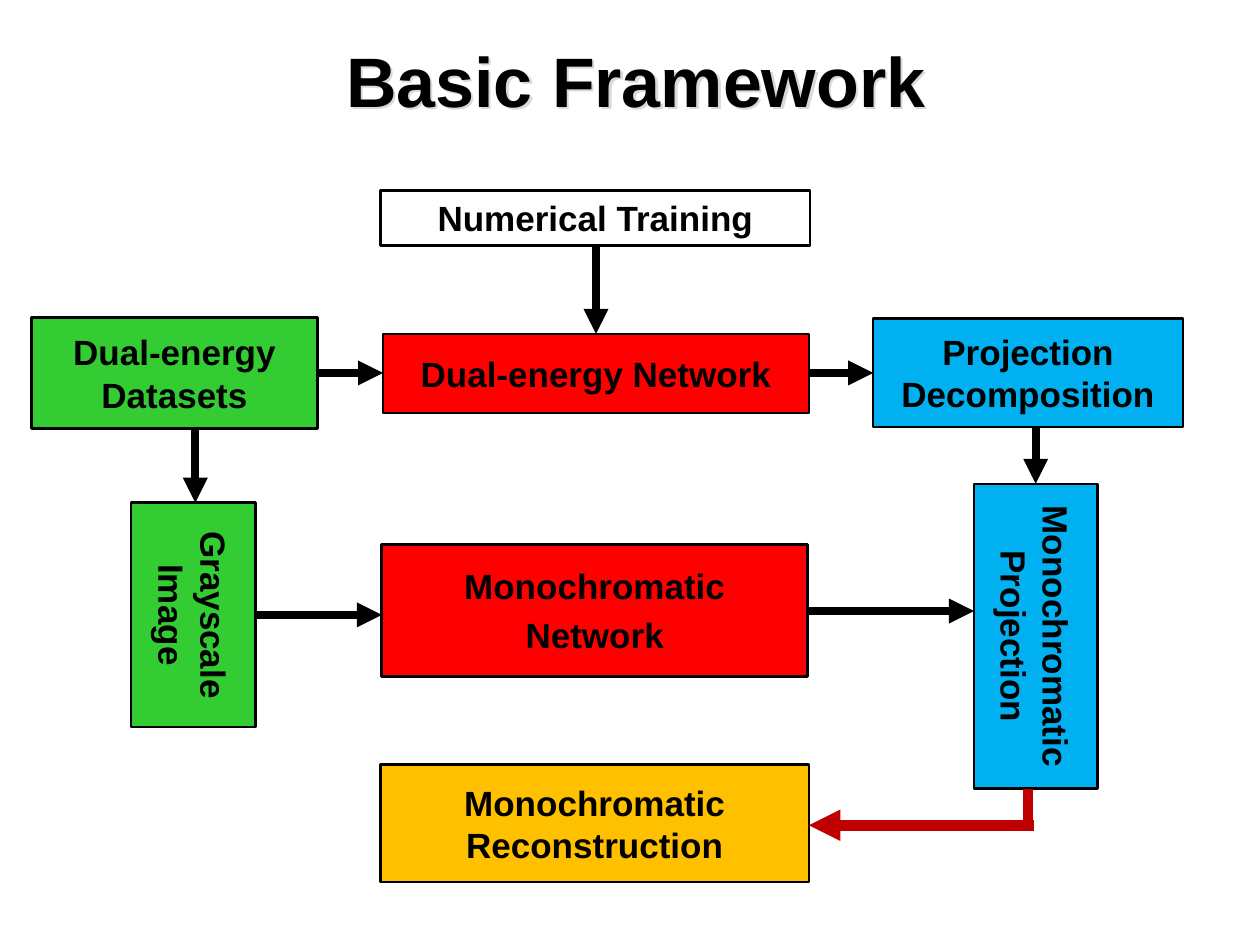
from collections import namedtuple

from lxml import etree
from pptx import Presentation
from pptx.dml.color import RGBColor
from pptx.enum.shapes import MSO_CONNECTOR, MSO_SHAPE
from pptx.enum.text import MSO_ANCHOR, PP_ALIGN
from pptx.oxml.ns import qn
from pptx.util import Inches, Pt

RECTANGLE = MSO_SHAPE.RECTANGLE
STRAIGHT = MSO_CONNECTOR.STRAIGHT
MIDDLE = MSO_ANCHOR.MIDDLE
CENTER = PP_ALIGN.CENTER

COLORS = {
    "ink": "000000",
    "data": "33CC33",
    "network": "FF0000",
    "projection": "00B0F0",
    "result": "FFC000",
    "return": "C00000",
    "shadow": "D9D9D9",
}

# The grid has square cells of a tenth of an inch
COLUMNS, ROWS = 100, 75

Stage = namedtuple("Stage", "left top right bottom")


def rgb(name):
    return RGBColor.from_string(COLORS[name])


def write(frame, text, size=20, color="ink", font="Arial", before=0, direction="horz"):
    """Fill a text frame with centred bold text, one paragraph a line."""
    frame.word_wrap = True
    frame.vertical_anchor = MIDDLE
    for index, line in enumerate(text.split("\n")):
        paragraph = frame.add_paragraph() if index else frame.paragraphs[0]
        paragraph.alignment = CENTER
        paragraph.space_before = Pt(before)
        run = paragraph.add_run()
        run.text = line
        run.font.size = Pt(size)
        run.font.bold = True
        run.font.name = font
        run.font.color.rgb = rgb(color)
    # python-pptx has no public setting for the text direction
    frame._element.find(qn("a:bodyPr")).set("vert", direction)


def add_effects(element):
    """Add an empty effect list, which also switches the theme's shadow off."""
    return etree.SubElement(element.find(qn("p:spPr")), qn("a:effectLst"))


class FlowSlide:
    """Current slide, its grid and the style of its parts."""

    outline = 1.5
    stroke = 4.75
    return_stroke = 6
    title_size = 40
    space_before = 4

    def __init__(self, deck):
        self.column = deck.slide_width / COLUMNS
        self.row = deck.slide_height / ROWS
        self.shapes = deck.slides.add_slide(deck.slide_layouts[6]).shapes

    def place(self, x, y):
        return round(x * self.column), round(y * self.row)

    def title(self, text, x, y, width, height):
        title = self.shapes.add_textbox(*self.place(x, y), *self.place(width, height))
        write(title.text_frame, text, size=self.title_size)
        # With no fill, the shadow falls from the letters
        shadow = etree.SubElement(add_effects(title.element), qn("a:outerShdw"),
                                  dist=str(Pt(2)), dir="2700000")
        etree.SubElement(shadow, qn("a:srgbClr"), val=COLORS["shadow"])

    def stage(self, text, x, y, width, height, fill=None, **text_format):
        """Draw a box and return its edges for the arrows."""
        box = self.shapes.add_shape(RECTANGLE, *self.place(x, y),
                                    *self.place(width, height))
        box.shadow.inherit = False
        if fill:
            box.fill.solid()
            box.fill.fore_color.rgb = rgb(fill)
        else:
            box.fill.background()
        box.line.color.rgb = rgb("ink")
        box.line.width = Pt(self.outline)
        write(box.text_frame, text, **{"before": self.space_before, **text_format})
        return Stage(x, y, x + width, y + height)

    def line(self, start, end, color="ink", width=stroke, arrow=True):
        link = self.shapes.add_connector(STRAIGHT, *self.place(*start),
                                         *self.place(*end))
        link.line.color.rgb = rgb(color)
        link.line.width = Pt(width)
        if arrow:
            outline = link.element.find(".//" + qn("a:ln"))
            etree.SubElement(outline, qn("a:tailEnd"), type="triangle")
        add_effects(link.element)

    def across(self, source, target, y):
        self.line((source.right, y), (target.left, y))

    def down(self, source, target, x):
        self.line((x, source.bottom), (x, target.top))


def main():
    deck = Presentation()
    deck.slide_width, deck.slide_height = Inches(10), Inches(7.5)
    flow = FlowSlide(deck)
    flow.title("Basic Framework", 2.1, 1.7, 96.7, 9.2)

    # Input data, on the left
    datasets = flow.stage("Dual-energy Datasets", 2.5, 25.2, 22.7, 8.8, "data")
    grayscale = flow.stage("Grayscale Image", 10.4, 39.9, 9.9, 17.8, "data",
                           direction="vert")

    # Training, networks and result, in the middle
    training = flow.stage("Numerical Training", 30.2, 15.1, 34.1, 4.4, before=0)
    dual_network = flow.stage("Dual-energy Network", 30.4, 26.5, 33.8, 6.3, "network")
    mono_network = flow.stage("Monochromatic\nNetwork", 30.3, 43.2, 33.8, 10.5,
                              "network")
    reconstruction = flow.stage("Monochromatic Reconstruction", 30.2, 60.7, 34, 9.3,
                                "result")

    # Projections, on the right
    decomposition = flow.stage("Projection Decomposition", 69.3, 25.3, 24.6, 8.6,
                               "projection")
    mono_projection = flow.stage("Monochromatic Projection", 77.3, 38.4, 9.8, 24.2,
                                 "projection", direction="vert")

    # Arrows along each row
    for source, target, y in (
        (datasets, dual_network, 29.6),
        (dual_network, decomposition, 29.6),
        (grayscale, mono_network, 48.8),
        (mono_network, mono_projection, 48.5),
    ):
        flow.across(source, target, y)

    # Arrows down each column
    for source, target, x in (
        (training, dual_network, 47.3),
        (datasets, grayscale, 15.5),
        (decomposition, mono_projection, 82.2),
    ):
        flow.down(source, target, x)

    # Return path: a plain drop, then an arrow that overlaps it at the corner
    drop_x, return_y, overlap = 81.6, 65.5, 0.45
    back = {"color": "return", "width": flow.return_stroke}
    flow.line((drop_x, mono_projection.bottom), (drop_x, return_y + overlap),
              arrow=False, **back)
    flow.line((drop_x + overlap, return_y), (reconstruction.right, return_y), **back)

    deck.save("out.pptx")


if __name__ == "__main__":
    main()
